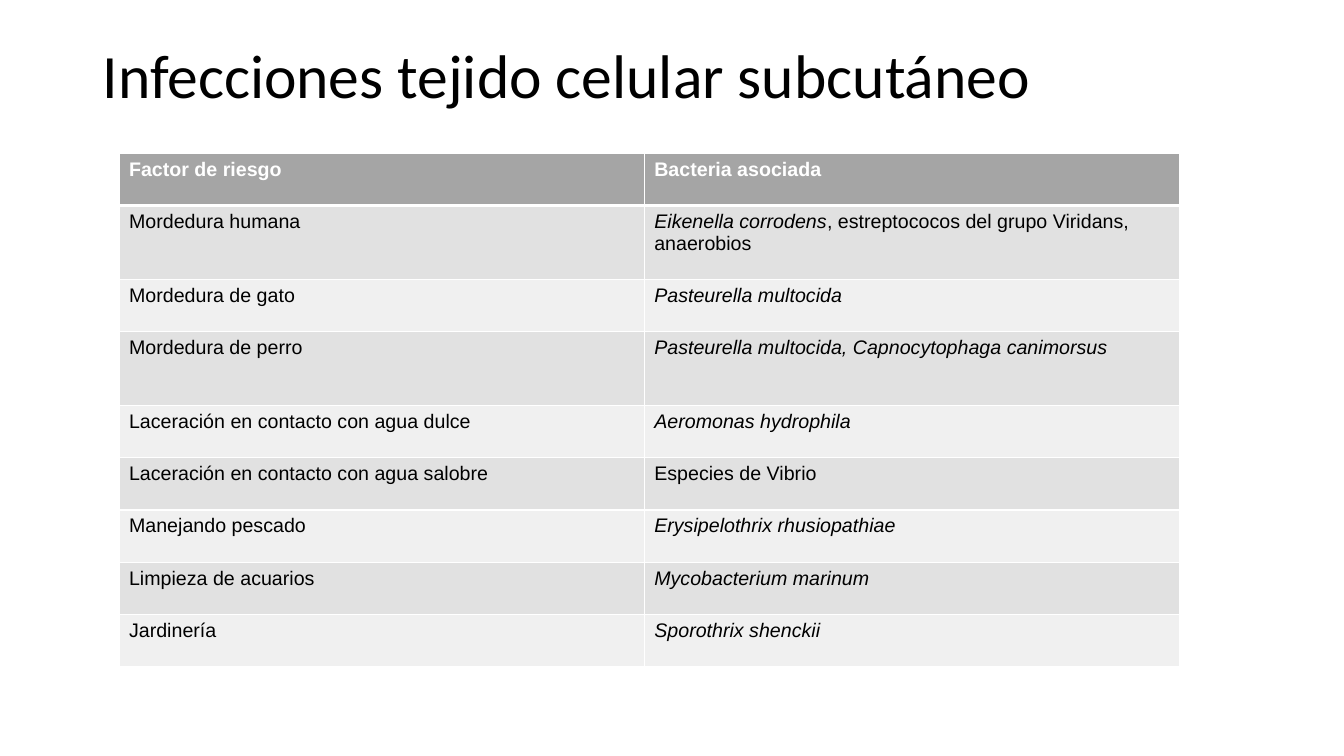
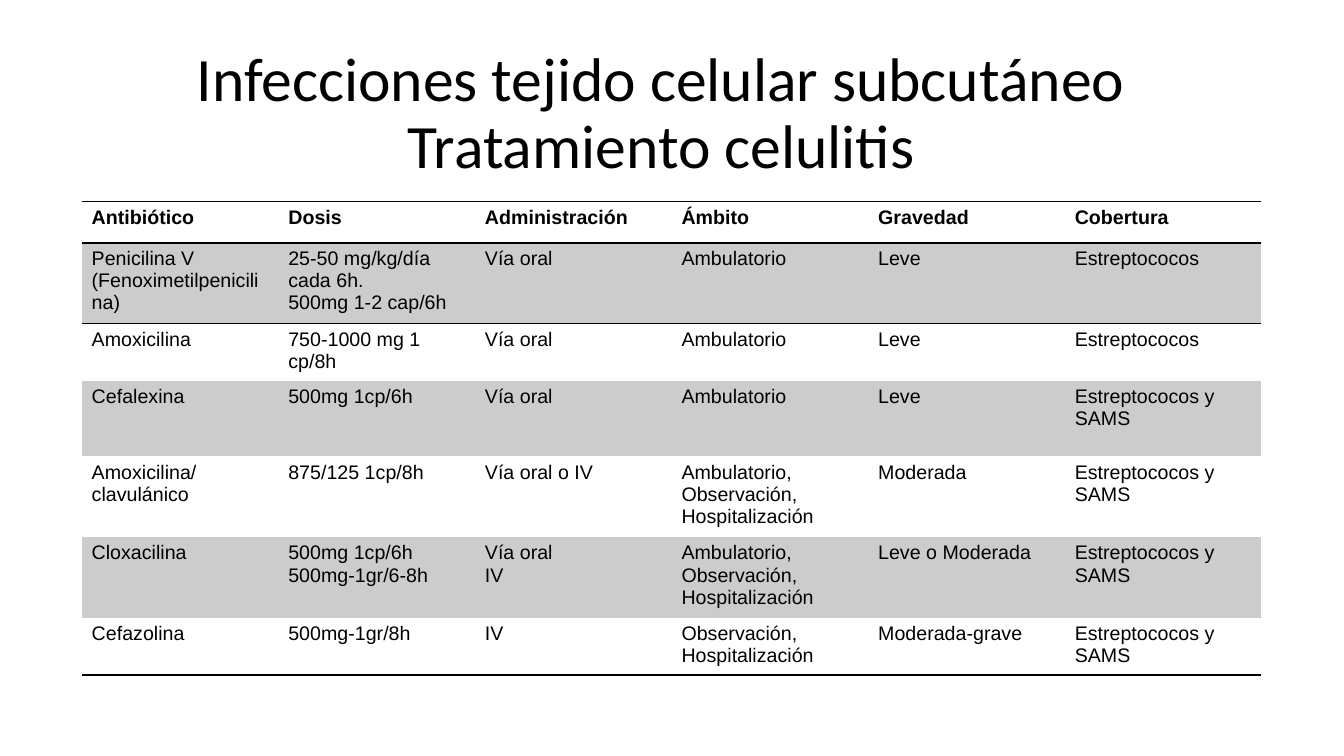
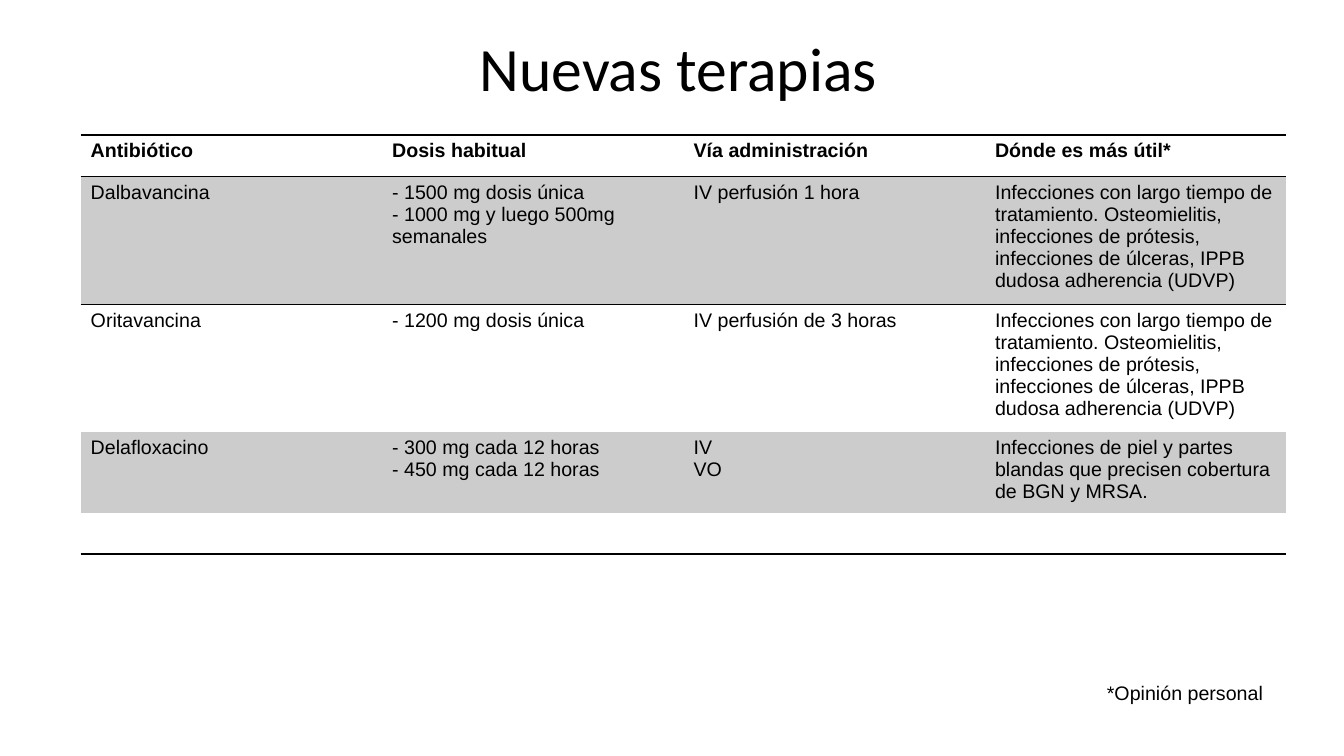
"""Build three slides of tables on soft tissue infections and their antibiotics."""
from lxml.etree import SubElement
from pptx import Presentation
from pptx.dml.color import RGBColor
from pptx.enum.text import MSO_ANCHOR, PP_ALIGN
from pptx.oxml.ns import qn
from pptx.util import Inches, Pt

COLORS = {
    "black": "000000",
    "white": "FFFFFF",
    "header": "A5A5A5",
    "dark_band": "E1E1E1",
    "light_band": "F0F0F0",
    "gray_band": "CCCCCC",
}
NO_STYLE_NO_GRID = "{2D5ABB26-0587-4C30-8999-92F81FD0307C}"
TOPIC = "Infecciones tejido celular subcutáneo"
LONG_TREATMENT = (
    "Infecciones con largo tiempo de tratamiento. Osteomielitis, infecciones de "
    "prótesis, infecciones de úlceras, IPPB dudosa adherencia (UDVP)"
)
ALL_SETTINGS = "Ambulatorio, Observación, Hospitalización"
STREP_AND_SAMS = "Estreptococos y SAMS"

# Paired underscores mark italic text; line breaks separate paragraphs.
SLIDES = [
    {
        "title": TOPIC,
        "title_box": (0.92, 0.4, 11.5, 1.45),
        "align": PP_ALIGN.LEFT,
        "look": "grid",
        "corner": (1.18, 1.52),
        "columns": [5.21, 5.31],
        "heights": [0.52, 0.73, 0.52, 0.73] + [0.52] * 5,
        "rows": [
            ("Factor de riesgo", "Bacteria asociada"),
            ("Mordedura humana",
             "_Eikenella corrodens_, estreptococos del grupo Viridans, anaerobios"),
            ("Mordedura de gato", "_Pasteurella multocida_"),
            ("Mordedura de perro", "_Pasteurella multocida, Capnocytophaga canimorsus_"),
            ("Laceración en contacto con agua dulce", "_Aeromonas hydrophila_"),
            ("Laceración en contacto con agua salobre", "Especies de Vibrio"),
            ("Manejando pescado", "_Erysipelothrix rhusiopathiae_"),
            ("Limpieza de acuarios", "_Mycobacterium marinum_"),
            ("Jardinería", "_Sporothrix shenckii_"),
        ],
    },
    {
        "title": TOPIC + "\nTratamiento celulitis",
        "title_box": (0.81, 0.43, 11.5, 1.45),
        "align": PP_ALIGN.CENTER,
        "look": "ruled",
        "corner": (0.81, 2),
        "columns": [1.95] * 6,
        "heights": [0.41, 0.76, 0.54, 0.75, 0.76, 0.76, 0.54],
        "rows": [
            ("Antibiótico", "Dosis", "Administración", "Ámbito", "Gravedad", "Cobertura"),
            ("Penicilina V (Fenoximetilpenicilina)",
             "25-50 mg/kg/día cada 6h.\n500mg 1-2 cap/6h",
             "Vía oral", "Ambulatorio", "Leve", "Estreptococos"),
            ("Amoxicilina", "750-1000 mg 1 cp/8h", "Vía oral", "Ambulatorio",
             "Leve", "Estreptococos"),
            ("Cefalexina", "500mg 1cp/6h", "Vía oral", "Ambulatorio", "Leve",
             STREP_AND_SAMS),
            ("Amoxicilina/clavulánico", "875/125 1cp/8h", "Vía oral o IV",
             ALL_SETTINGS, "Moderada", STREP_AND_SAMS),
            ("Cloxacilina", "500mg 1cp/6h\n500mg-1gr/6-8h", "Vía oral\nIV",
             ALL_SETTINGS, "Leve o Moderada", STREP_AND_SAMS),
            ("Cefazolina", "500mg-1gr/8h", "IV", "Observación, Hospitalización",
             "Moderada-grave", STREP_AND_SAMS),
        ],
    },
    {
        "title": "Nuevas terapias",
        "title_box": (0.98, 0.33, 11.5, 0.92),
        "align": PP_ALIGN.CENTER,
        "look": "ruled",
        "corner": (0.8, 1.34),
        "columns": [2.99] * 4,
        "heights": [0.41, 1.19, 1.19, 0.76, 0.41],
        "rows": [
            ("Antibiótico", "Dosis habitual", "Vía administración", "Dónde es más útil*"),
            ("Dalbavancina", "- 1500 mg dosis única\n- 1000 mg y luego 500mg semanales",
             "IV perfusión 1 hora", LONG_TREATMENT),
            ("Oritavancina", "- 1200 mg dosis única", "IV perfusión de 3 horas",
             LONG_TREATMENT),
            ("Delafloxacino", "- 300 mg cada 12 horas\n- 450 mg cada 12 horas", "IV\nVO",
             "Infecciones de piel y partes blandas que precisen cobertura de BGN y MRSA."),
            ("", "", "", ""),
        ],
        "footnote": "*Opinión personal",
    },
]
FOOTNOTE_BOX = (10.88, 6.71, 2.4, 0.34)


def rgb(name):
    return RGBColor.from_string(COLORS[name])


def write(text_frame, text, size=14, font="Arial", color="black", bold=False):
    for index, line in enumerate(text.split("\n")):
        paragraph = text_frame.paragraphs[0] if index == 0 else text_frame.add_paragraph()
        for position, piece in enumerate(line.split("_")):
            if piece:
                run = paragraph.add_run()
                run.text = piece
                run.font.size = Pt(size)
                run.font.name = font
                run.font.bold = bold
                run.font.italic = position % 2 == 1
                run.font.color.rgb = rgb(color)


def add_text(slide, box, text, **style):
    text_frame = slide.shapes.add_textbox(*map(Inches, box)).text_frame
    text_frame.word_wrap = True
    text_frame.vertical_anchor = MSO_ANCHOR.TOP
    write(text_frame, text, **style)
    return text_frame


def add_title(slide, content):
    text_frame = add_text(slide, content["title_box"], content["title"],
                          size=44, font="Calibri")
    for paragraph in text_frame.paragraphs:
        paragraph.alignment = content["align"]
        paragraph.line_spacing = 0.9


def cell_look(look, row, last_row):
    """Return the fill, text colour and border widths by side for a row."""
    if look == "grid":
        fill = "header" if row == 0 else ("light_band", "dark_band")[row % 2]
        borders = {"L": 1, "R": 1, "T": 3 if row == 1 else 1, "B": 3 if row == 0 else 1}
        return fill, "white" if row == 0 else "black", borders
    borders = {}
    if row <= 1:
        borders["T"] = 1
    if row in (0, last_row):
        borders["B"] = 1
    return "gray_band" if row % 2 else None, "black", borders


def set_borders(cell, borders, color):
    properties = cell._tc.get_or_add_tcPr()
    for side in "LRTB":
        if side in borders:
            line = SubElement(properties, qn("a:ln" + side), w=str(Pt(borders[side])))
            solid = SubElement(line, qn("a:solidFill"))
            SubElement(solid, qn("a:srgbClr"), val=COLORS[color])


def add_grid(slide, content):
    rows, columns, heights = content["rows"], content["columns"], content["heights"]
    box = (*content["corner"], sum(columns), sum(heights))
    frame = slide.shapes.add_table(len(rows), len(columns), *map(Inches, box))
    for style in frame.element.iter(qn("a:tableStyleId")):
        style.text = NO_STYLE_NO_GRID
    table = frame.table
    table.horz_banding = False
    for column, width in zip(table.columns, columns):
        column.width = Inches(width)
    border_color = "white" if content["look"] == "grid" else "black"
    for row, (texts, height) in enumerate(zip(rows, heights)):
        table.rows[row].height = Inches(height)
        fill, color, borders = cell_look(content["look"], row, len(rows) - 1)
        for column, text in enumerate(texts):
            cell = table.cell(row, column)
            set_borders(cell, borders, border_color)
            if fill:
                cell.fill.solid()
                cell.fill.fore_color.rgb = rgb(fill)
            else:
                cell.fill.background()
            write(cell.text_frame, text, color=color, bold=row == 0)


def main():
    presentation = Presentation()
    presentation.slide_width = Inches(13.33)
    presentation.slide_height = Inches(7.5)
    for content in SLIDES:
        slide = presentation.slides.add_slide(presentation.slide_layouts[6])
        add_title(slide, content)
        add_grid(slide, content)
        if "footnote" in content:
            add_text(slide, FOOTNOTE_BOX, content["footnote"])
    presentation.save("out.pptx")


if __name__ == "__main__":
    main()
